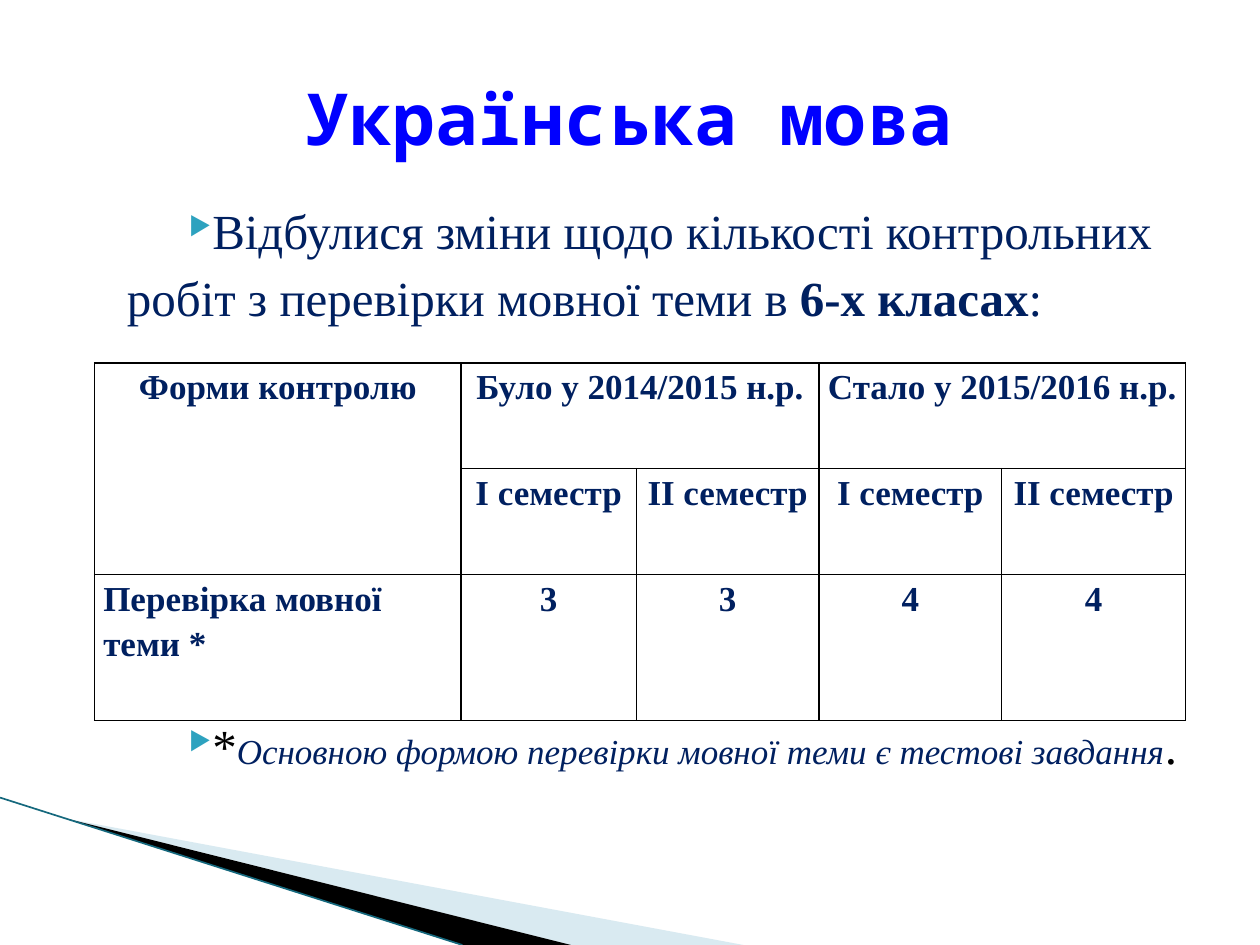
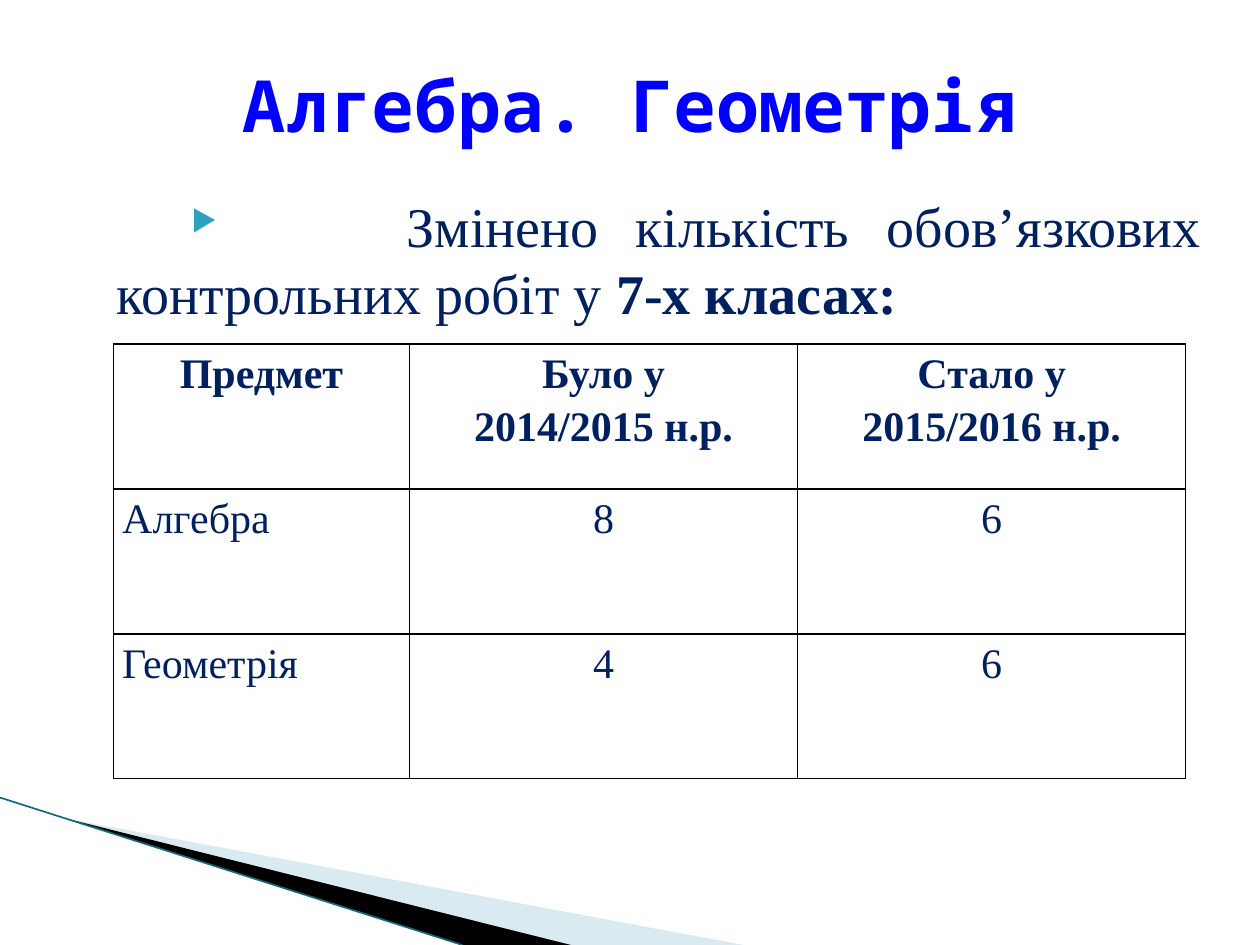
from lxml import etree
from pptx import Presentation
from pptx import util as u
from pptx.dml.color import RGBColor
from pptx.enum import shapes, text
from pptx.oxml import ns

NAVY, BLUE, TEAL, BLACK = "002060", "0000FF", "2DA2BF", "000000"
SERIF, MONO = "Times New Roman", "Noto Sans Mono"
CENTER, LEFT = text.PP_ALIGN.CENTER, text.PP_ALIGN.LEFT
JUSTIFY = text.PP_ALIGN.JUSTIFY
NBSP = chr(160)
BEFORE, AFTER = f"Було у 2014/2015{NBSP}н.р.", f"Стало у 2015/2016{NBSP}н.р."


def rgb(color):
    """Turn a hex string into a colour."""
    return RGBColor.from_string(color)


def sub(parent, tag, **attrs):
    """Append a drawing element with attributes."""
    e = etree.SubElement(parent, ns.qn(f"a:{tag}"))
    for name, value in attrs.items():
        e.set(name, str(value))
    return e


def add_run(p, content, size=28, font=SERIF, color=NAVY, bold=False, italic=False):
    """Add a formatted run to a paragraph."""
    r = p.add_run()
    r.text = content
    r.font.size, r.font.name = u.Pt(size), font
    r.font.bold, r.font.italic = bold, italic
    r.font.color.rgb = rgb(color)


def add_box(s, box, anchor=text.MSO_ANCHOR.TOP):
    """Add a wrapping text box and return its first paragraph."""
    tf = s.shapes.add_textbox(*map(u.Inches, box)).text_frame
    tf.word_wrap = True
    tf.vertical_anchor = anchor
    return tf.paragraphs[0]


def add_title(s, box, content):
    """Add the centred slide title."""
    p = add_box(s, box, text.MSO_ANCHOR.MIDDLE)
    p.alignment = CENTER
    add_run(p, content, size=41, font=MONO, color=BLUE, bold=True)


def add_bullet(s, box, runs, indent, spacing=1.0, align=LEFT, tab=None):
    """Add an arrow-bulleted paragraph made of formatted runs."""
    p = add_box(s, box)
    p.alignment, p.line_spacing = align, spacing
    pPr = p._p.get_or_add_pPr()
    pPr.set("marL", str(u.Inches(0.4)))
    pPr.set("indent", str(u.Inches(indent)))
    sub(sub(pPr, "buClr"), "srgbClr", val=TEAL)
    sub(pPr, "buSzPct", val=52000)
    sub(pPr, "buChar", char="▶")
    if tab:
        sub(sub(pPr, "tabLst"), "tab", pos=u.Inches(tab), algn="l")
    for content, style in runs:
        add_run(p, content, **style)


def add_polygon(s, points, color, alpha=100):
    """Draw a filled polygon without an outline."""
    start, *others = [(u.Inches(x), u.Inches(y)) for x, y in points]
    builder = s.shapes.build_freeform(*start)
    builder.add_line_segments(others)
    sp = builder.convert_to_shape()
    sp.shadow.inherit = False
    sp.line.fill.background()
    sp.fill.solid()
    sp.fill.fore_color.rgb = rgb(color)
    fill = sp.fill._xPr.find(ns.qn("a:solidFill"))
    sub(fill[0], "alpha", val=alpha * 1000)


def add_corner(s):
    """Draw the swoosh in the bottom left corner."""
    apex, bottom = (0.54, 6.5), 7.5
    add_polygon(s, [apex, (5.9, bottom), (4.53, bottom)], "A0CBDC", 40)
    add_polygon(s, [apex, (4.53, bottom), (3.66, bottom)], BLACK)
    ends = map(u.Inches, (0, 6.33, 3.67, bottom))
    line = s.shapes.add_connector(shapes.MSO_CONNECTOR.STRAIGHT, *ends)
    line.line.color.rgb = rgb("15687D")
    line.line.width = u.Pt(0.95)
    sub(line._element.spPr, "effectLst")


def format_cell(cell, content, size, bold, align):
    """Fill in one bordered, transparent table cell."""
    cell.margin_left = cell.margin_right = u.Inches(0.07)
    cell.margin_top = cell.margin_bottom = 0
    tcPr = cell._tc.get_or_add_tcPr()
    for side in ("lnL", "lnR", "lnT", "lnB"):
        ln = sub(tcPr, side, w=u.Pt(1))
        sub(sub(ln, "solidFill"), "srgbClr", val=BLACK)
    cell.fill.background()
    p = cell.text_frame.paragraphs[0]
    p.alignment, p.line_spacing = align, 1.15
    if content:
        add_run(p, content, size=size, bold=bold)


def add_grid(s, left, top, widths, heights, rows, size, head_rows, bold_body, merges=()):
    """Add a table whose body rows start with a left-aligned label."""
    box = map(u.Inches, (left, top, sum(widths), sum(heights)))
    table = s.shapes.add_table(len(rows), len(widths), *box).table
    table.first_row = table.horz_banding = False
    for column, width in zip(table.columns, widths):
        column.width = u.Inches(width)
    for row, height in zip(table.rows, heights):
        row.height = u.Inches(height)
    for i, row in enumerate(rows):
        head = i < head_rows
        for j, content in enumerate(row):
            align = CENTER if head or j else LEFT
            format_cell(table.cell(i, j), content, size, head or bold_body, align)
    for start, end in merges:
        table.cell(*start).merge(table.cell(*end))


def language_slide(s):
    """Build the Ukrainian language slide."""
    add_corner(s)
    add_bullet(s, (0.51, 1.47, 9, 1.2), [
        ("Відбулися зміни щодо кількості контрольних робіт з перевірки мовної теми в ", {}),
        ("6-х класах", {"bold": True}),
        (":", {}),
    ], indent=0.49, spacing=1.15)
    add_bullet(s, (0.51, 5.56, 9, 0.65), [
        ("*", {"color": BLACK}),
        ("Основною формою перевірки мовної теми є тестові завдання",
         {"size": 20, "italic": True}),
        (".", {"color": BLACK}),
    ], indent=0.49, spacing=1.15)
    add_title(s, (0.5, 0.3, 9, 1.25), "Українська мова")
    terms = ["І семестр", "ІІ семестр"]
    rows = [
        ["Форми контролю", BEFORE, "", AFTER, ""],
        [""] + terms * 2,
        ["Перевірка мовної теми *", "3", "3", "4", "4"],
    ]
    merges = [((0, 0), (1, 0)), ((0, 1), (0, 2)), ((0, 3), (0, 4))]
    add_grid(s, 0.75, 2.88, [2.91, 1.39, 1.45, 1.45, 1.46], [0.84, 0.84, 1.16],
             rows, size=20, head_rows=2, bold_body=True, merges=merges)


def maths_slide(s):
    """Build the algebra and geometry slide."""
    add_corner(s)
    add_bullet(s, (0.43, 1.47, 9.21, 1.2), [
        ("\tЗмінено кількість обов’язкових контрольних робіт у ", {"size": 32}),
        ("7-х класах:", {"size": 32, "bold": True}),
    ], indent=0.59, align=JUSTIFY, tab=2.7)
    add_title(s, (0.63, 0.33, 8.75, 0.98), "Алгебра. Геометрія")
    rows = [
        ["Предмет", BEFORE, AFTER],
        ["Алгебра", "8", "6"],
        ["Геометрія", "4", "6"],
    ]
    add_grid(s, 0.9, 2.73, [2.35, 3.08, 3.08], [1.15] * 3,
             rows, size=24, head_rows=1, bold_body=False)


def main():
    """Build and save the presentation."""
    prs = Presentation()
    prs.slide_width, prs.slide_height = u.Inches(10), u.Inches(7.5)
    for build in (language_slide, maths_slide):
        build(prs.slides.add_slide(prs.slide_layouts[6]))
    prs.save("out.pptx")


if __name__ == "__main__":
    main()
